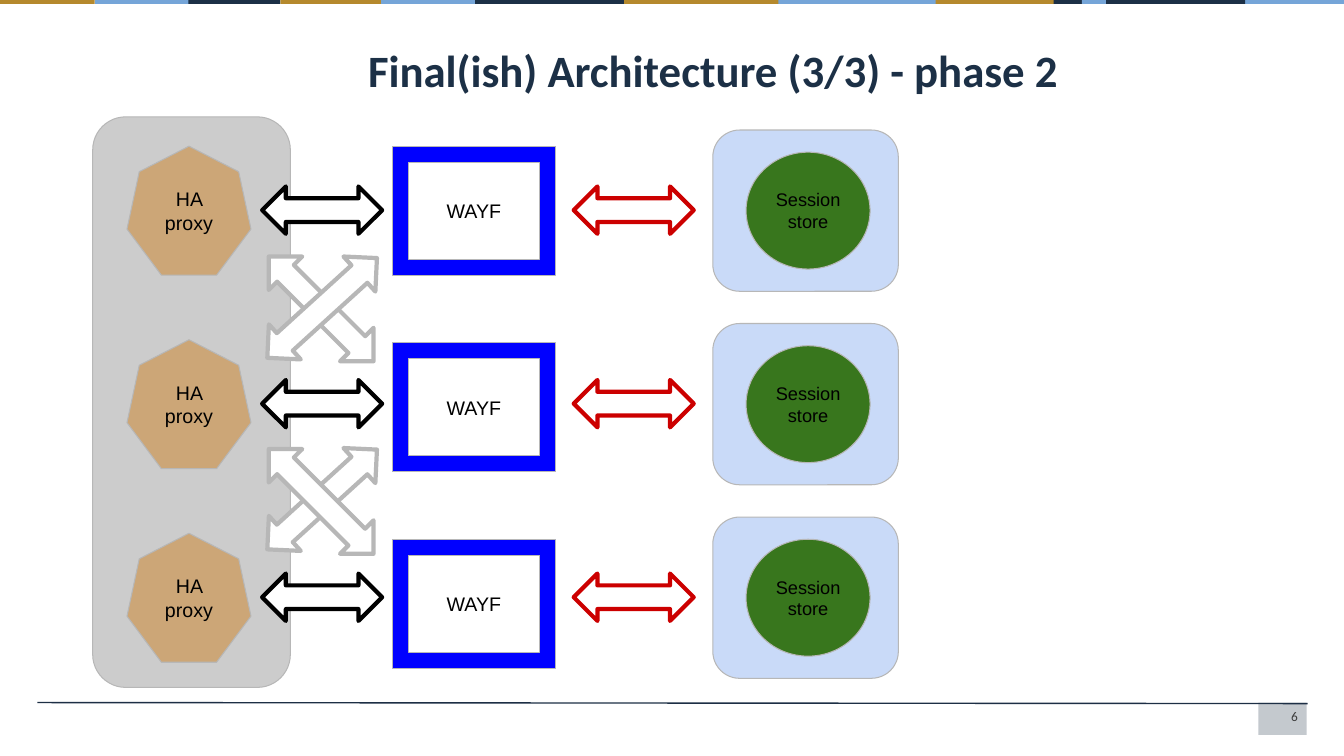
from dataclasses import dataclass

from lxml import etree
from pptx import Presentation
from pptx.dml.color import RGBColor
from pptx.enum.shapes import MSO_CONNECTOR, MSO_SHAPE
from pptx.enum.text import MSO_ANCHOR, MSO_AUTO_SIZE, PP_ALIGN
from pptx.oxml.ns import qn
from pptx.util import Emu, Pt

PX = 9144
COLORS = {
    "navy": "1C3046", "gold": "B5892D", "sky": "75A5D8", "rule": "1D2F45",
    "gray": "CCCCCC", "edge": "B7B7B7", "pale": "C9DAF8", "tan": "CCA677",
    "green": "38761D", "blue": "0000FF", "red": "CC0000", "white": "FFFFFF",
    "black": "000000", "number": "3C3C3C",
}


@dataclass(frozen=True)
class Band:
    left: int
    width: int
    color: str


@dataclass(frozen=True)
class Node:
    kind: MSO_SHAPE
    left: int
    top: int
    width: int
    height: int
    fill: str
    line: str = "edge"
    weight: float = 0.75
    text: str = ""
    size: int = 14
    pitch: int = 192
    rotation: float = 0
    adj: tuple[float, ...] = ()


BANDS = [
    Band(454, 165, "navy"), Band(866, 462, "gold"), Band(1225, 109, "sky"),
    Band(278, 148, "gold"), Band(1045, 190, "navy"), Band(761, 167, "sky"),
    Band(186, 92, "navy"), Band(94, 93, "sky"), Band(378, 93, "sky"),
    Band(619, 153, "gold"), Band(1073, 24, "sky"), Band(0, 94, "gold"),
]
ARROW = MSO_SHAPE.LEFT_RIGHT_ARROW
ROUND = MSO_SHAPE.ROUNDED_RECTANGLE
CLUSTER = Node(ROUND, 92, 116, 196, 566, "gray")
ROW = [
    Node(ROUND, 707, 129, 184, 160, "pale"),
    Node(MSO_SHAPE.HEPTAGON, 126, 145, 123, 128, "tan", text="HA proxy"),
    Node(MSO_SHAPE.OVAL, 740, 151, 123, 116, "green", text="Session store", size=13),
    Node(ARROW, 260, 185, 119, 47, "white", "black", 3),
    Node(ARROW, 569, 185, 119, 47, "white", "red", 3),
    Node(MSO_SHAPE.FRAME, 389, 145, 162, 128, "blue", text="WAYF", pitch=195, adj=(0.125,)),
]
CROSSINGS = [
    Node(ARROW, 245, 283, 147, 47, "white", "edge", 3, rotation=45),
    Node(ARROW, 246, 282, 147, 47, "white", "edge", 3, rotation=317.7),
    Node(ARROW, 246, 472, 147, 47, "white", "edge", 3, rotation=317.7),
    Node(ARROW, 245, 474, 147, 47, "white", "edge", 3, rotation=45),
]


def px(n: int) -> Emu:
    return Emu(n * PX)


def rgb(name: str) -> RGBColor:
    return RGBColor.from_string(COLORS[name])


def set_insets(tf, x: int, y: int) -> None:
    tf.word_wrap = True
    tf.auto_size = MSO_AUTO_SIZE.NONE
    tf.margin_left = tf.margin_right = px(x)
    tf.margin_top = tf.margin_bottom = px(y)


def add_run(p, text: str, font: str, size: float, color: str, bold: bool = False) -> None:
    r = p.add_run()
    r.text = text
    r.font.name = font
    r.font.size = Pt(size)
    r.font.bold = bold
    r.font.color.rgb = rgb(color)


def add_node(s, node: Node, row: int = 0) -> None:
    sp = s.shapes.add_shape(node.kind, px(node.left), px(node.top + row * node.pitch),
                            px(node.width), px(node.height))
    sp.shadow.inherit = False
    sp.rotation = node.rotation
    for i, value in enumerate(node.adj):
        sp.adjustments[i] = value
    sp.fill.solid()
    sp.fill.fore_color.rgb = rgb(node.fill)
    sp.line.color.rgb = rgb(node.line)
    sp.line.width = Pt(node.weight)
    if node.text:
        tf = sp.text_frame
        set_insets(tf, 10, 10)
        tf.vertical_anchor = MSO_ANCHOR.MIDDLE
        p = tf.paragraphs[0]
        p.alignment = PP_ALIGN.CENTER
        add_run(p, node.text, "Arial", node.size, "black")


def add_block(s, left: int, top: int, width: int, height: int, color: str):
    sp = s.shapes.add_shape(MSO_SHAPE.RECTANGLE, px(left), px(top), px(width), px(height))
    sp.shadow.inherit = False
    sp.fill.solid()
    sp.fill.fore_color.rgb = rgb(color)
    sp.line.fill.background()
    return sp


def add_title(s, text: str) -> None:
    sp = s.shapes.title
    sp.left, sp.top, sp.width, sp.height = px(352), px(21), px(944), px(90)
    tf = sp.text_frame
    set_insets(tf, 13, 13)
    tf.vertical_anchor = MSO_ANCHOR.TOP
    p = tf.paragraphs[0]
    p.alignment = PP_ALIGN.LEFT
    p.line_spacing = 1.15
    p.space_after = Pt(16)
    add_run(p, text, "Calibri", 32, "navy", True)


def add_furniture(s) -> None:
    number_box = add_block(s, 1248, 697, 48, 32, "rule")
    color = number_box.fill._xPr.find(qn("a:solidFill"))[0]
    etree.SubElement(color, qn("a:alpha"), val="26000")
    for band in BANDS:
        add_block(s, band.left, 0, band.width, 4, band.color)
    rule = s.shapes.add_connector(MSO_CONNECTOR.STRAIGHT, px(1297), px(698), px(37), px(697))
    rule.line.color.rgb = rgb("rule")
    rule.line.width = Pt(1)
    etree.SubElement(rule._element.spPr, qn("a:effectLst"))


def add_number(s, text: str) -> None:
    tf = s.shapes.add_textbox(px(956), px(698), px(341), px(31)).text_frame
    set_insets(tf, 10, 5)
    p = tf.paragraphs[0]
    p.alignment = PP_ALIGN.RIGHT
    add_run(p, text, "Calibri", 9.5, "number")


def main() -> None:
    prs = Presentation()
    prs.slide_width, prs.slide_height = px(1333), px(750)
    s = prs.slides.add_slide(prs.slide_layouts[5])
    add_furniture(s)
    add_title(s, "Final(ish) Architecture (3/3) - phase 2")
    add_node(s, CLUSTER)
    for row in range(3):
        for node in ROW:
            add_node(s, node, row)
    for node in CROSSINGS:
        add_node(s, node)
    add_number(s, "6")
    prs.save("out.pptx")


if __name__ == "__main__":
    main()
